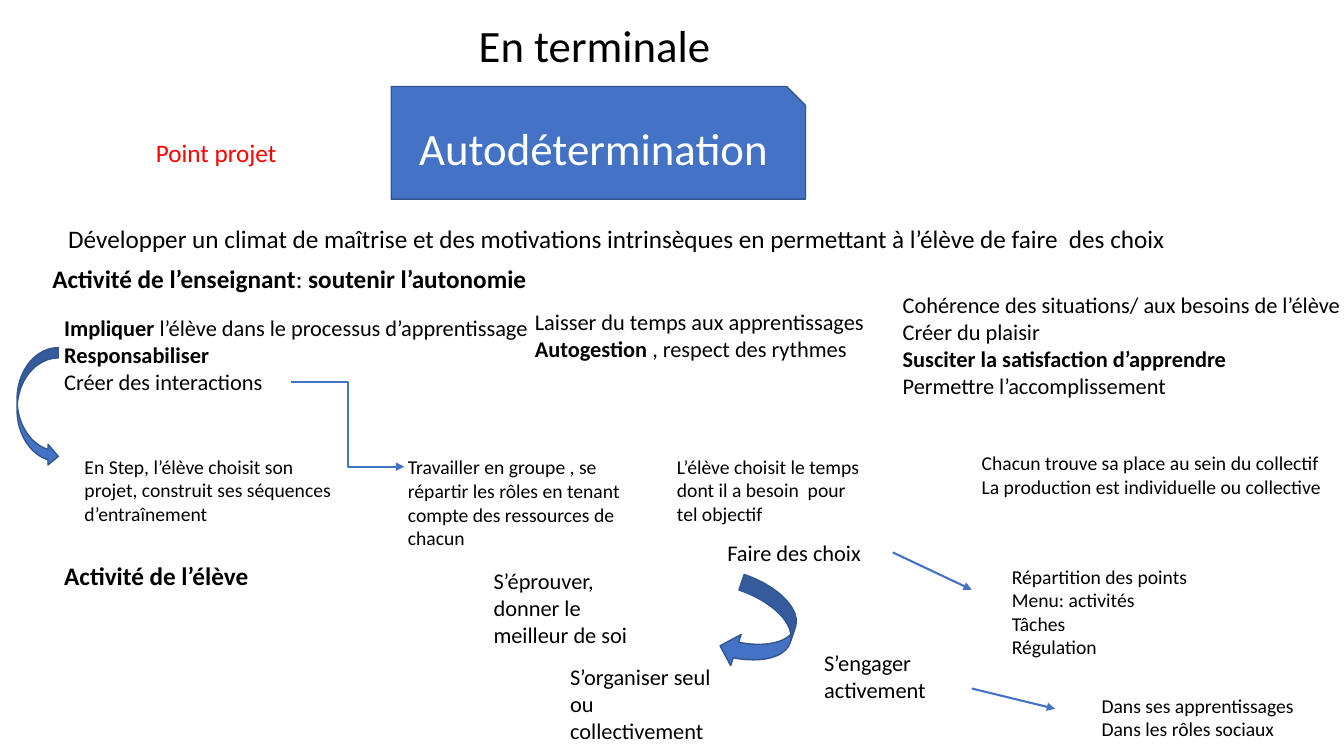
from pptx import Presentation
from pptx.dml.color import RGBColor
from pptx.enum import shapes, text
from pptx.oxml import parse_xml
from pptx.oxml.ns import nsdecls, qn
from pptx.util import Cm, Pt

FONT = "Calibri"
BLACK, RED, WHITE = "000000", "FF0000", "FFFFFF"
BLUE, EDGE = "4472C4", "325491"

TITLE = ("En terminale", (11.81, 0.33, 10, 1.63))
THEME = "Autodétermination"

HEADS = [
    (1.47, 5.51, 29.31, 1.02, "Développer un climat de maîtrise et des motivations intrinsèques en permettant à l’élève de faire  des choix", BLACK),
    (1.07, 6.5, 12.55, 1.02, "*Activité de l’enseignant*: *soutenir l’autonomie*", BLACK),
    (1.37, 14, 5.44, 1.02, "*Activité de l’élève*", BLACK),
    (3.68, 3.33, 5.11, 1.02, "Point projet", RED),
]
IDEAS = [
    (1.37, 7.8, 12.78, 2.31, "*Impliquer* l’élève dans le processus d’apprentissage\n*Responsabiliser*\nCréer des interactions", BLACK),
    (13.23, 7.65, 9.27, 1.63, "Laisser du temps aux apprentissages\n*Autogestion* , respect des rythmes", BLACK),
    (22.5, 7.21, 11.81, 3.76, "Cohérence des situations/ aux besoins de l’élève\nCréer du plaisir\n*Susciter la satisfaction d’apprendre*\nPermettre l’accomplissement", BLACK),
    (18.08, 13.46, 4.42, 0.94, "Faire des choix", BLACK),
    (12.19, 14.17, 4.45, 2.31, "S’éprouver, donner le meilleur de soi", BLACK),
    (14.12, 16.59, 4.45, 2.31, "S’organiser seul ou collectivement", BLACK),
    (20.52, 16.23, 3.96, 1.63, "S’engager activement", BLACK),
]
CASES = [
    (1.88, 11.33, 6.91, 2.06, "En Step, l’élève choisit son projet, construit ses séquences d’entraînement", BLACK),
    (10.03, 11.35, 5.99, 2.64, "Travailler en groupe , se répartir les rôles en tenant compte des ressources de chacun", BLACK),
    (16.81, 11.33, 5.16, 2.06, "L’élève choisit le temps dont il a besoin  pour tel objectif", BLACK),
    (24.49, 11.25, 9.17, 1.45, "Chacun trouve sa place au sein du collectif\nLa production est individuelle ou collective", BLACK),
    (25.25, 14.1, 5.44, 2.64, "Répartition des points\nMenu: activités\nTâches\nRégulation", BLACK),
    (27.51, 17.35, 5.82, 1.45, "Dans ses apprentissages\nDans les rôles sociaux", BLACK),
]

KIND = shapes.MSO_SHAPE
BLOCKS = {
    "theme": (KIND.SNIP_1_RECTANGLE, (9.86, 2.18, 10.44, 2.84), 0),
    "choice": (KIND.CURVED_LEFT_ARROW, (18.34, 14.68, 1.65, 2.31), 18.7),
    "step": (KIND.CURVED_RIGHT_ARROW, (0.43, 8.76, 1.04, 3), 0),
}
LINK = shapes.MSO_CONNECTOR
ARROWS = [
    (LINK.STRAIGHT, (22.5, 13.92, 24.49, 14.86)),
    (LINK.STRAIGHT, (24.49, 17.35, 26.59, 17.86)),
    (LINK.ELBOW, (7.34, 9.63, 10.19, 11.76)),
]


def paint(hue):
    return RGBColor.from_string(hue)


def style(run, size, hue):
    run.font.name = FONT
    run.font.size = Pt(size)
    run.font.color.rgb = paint(hue)


def write(slide, size, box):
    *area, words, hue = box
    frame = slide.shapes.add_textbox(*map(Cm, area)).text_frame
    frame.word_wrap = True
    for i, row in enumerate(words.split("\n")):
        para = frame.add_paragraph() if i else frame.paragraphs[0]
        for j, part in enumerate(row.split("*")):
            if part:
                run = para.add_run()
                run.text = part
                run.font.bold = j % 2 == 1
                style(run, size, hue)


def block(slide, kind, area, turn):
    shape = slide.shapes.add_shape(kind, *map(Cm, area))
    shape.shadow.inherit = False
    shape.rotation = turn
    shape.fill.solid()
    shape.fill.fore_color.rgb = paint(BLUE)
    shape.line.color.rgb = paint(EDGE)
    shape.line.width = Pt(1)
    return shape


def arrow(slide, kind, ends):
    link = slide.shapes.add_connector(kind, *map(Cm, ends))
    link.line.color.rgb = paint(BLUE)
    link.line.width = Pt(1.5)
    props = link._element.spPr
    props.find(qn("a:ln")).append(parse_xml(f'<a:tailEnd {nsdecls("a")} type="triangle"/>'))
    props.append(parse_xml(f'<a:effectLst {nsdecls("a")}/>'))


def label(shape, words, align, anchor):
    frame = shape.text_frame
    frame.text = words
    frame.word_wrap = True
    frame.auto_size = text.MSO_AUTO_SIZE.NONE
    frame.vertical_anchor = anchor
    para = frame.paragraphs[0]
    para.alignment = align
    style(para.runs[0], 32, WHITE if words == THEME else BLACK)


def main():
    deck = Presentation()
    deck.slide_width, deck.slide_height = Cm(33.87), Cm(19.05)
    slide = deck.slides.add_slide(deck.slide_layouts[5])
    words, area = TITLE
    title = slide.shapes.title
    title.left, title.top, title.width, title.height = map(Cm, area)
    label(title, words, text.PP_ALIGN.LEFT, text.MSO_ANCHOR.TOP)
    made = {name: block(slide, *spec) for name, spec in BLOCKS.items()}
    label(made["theme"], THEME, text.PP_ALIGN.CENTER, text.MSO_ANCHOR.MIDDLE)
    for size, group in ((18, HEADS), (16, IDEAS), (14, CASES)):
        for box in group:
            write(slide, size, box)
    for kind, ends in ARROWS:
        arrow(slide, kind, ends)
    deck.save("out.pptx")


if __name__ == "__main__":
    main()
